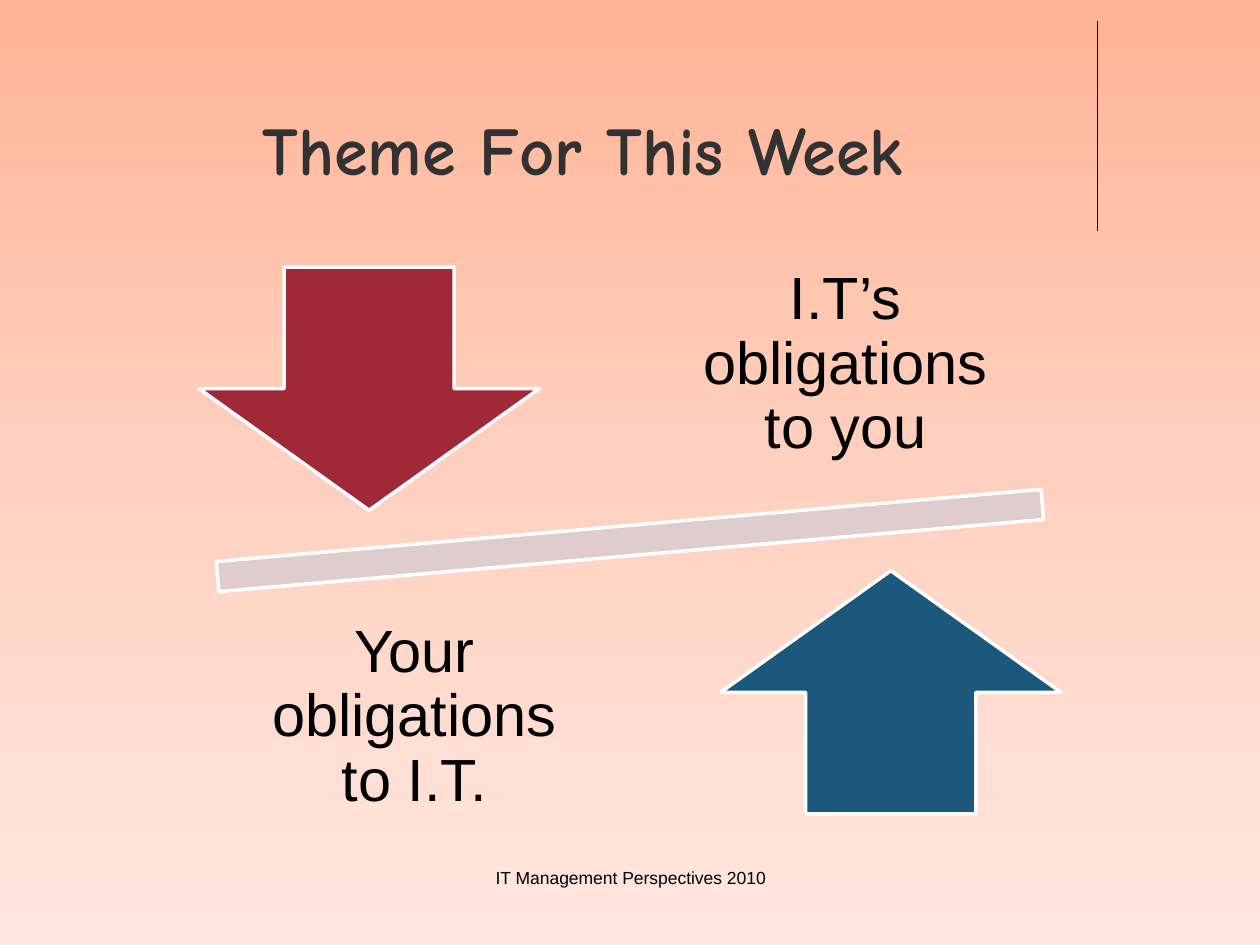
"""Builds the 'Theme For This Week' slide with two balanced arrows."""
from copy import deepcopy

from lxml import etree
from pptx import Presentation
from pptx import util as u
from pptx.dml.color import RGBColor
from pptx.enum import shapes, text
from pptx.oxml.ns import qn

COLORS = {"ink": "000000", "title": "323232", "edge": "FFFFFF", "bar": "DFCDCE",
          "down": "9F2936", "up": "1B587C"}
BACKGROUND = [(0, "FFB496"), (0.5, "FFD0BF"), (1, "FFE7E0")]

TITLE = ("Theme For This Week", (0.5, 0.13, 8.25, 1.42))
FOOTER = ("IT Management Perspectives 2010", (3.42, 6.83, 3.17, 0.5))
RULE = (8.71, 0.17, 8.71, 1.83)
FIGURES = [
    ("MATH_MINUS", "bar", (0.53, 3.78, 8.94, 1.02), 355),
    ("DOWN_ARROW", "down", (1.58, 2.12, 2.7, 1.93), 0),
    ("UP_ARROW", "up", (5.72, 4.53, 2.7, 1.93), 0),
]
OBLIGATIONS = [
    ("I.T’s obligations to you", (5.27, 1.88, 2.88, 2.03)),
    ("Your obligations to I.T.", (1.85, 4.68, 2.88, 2.03)),
]

TITLE_FONT = {"name": "Comic Neue", "size": u.Pt(39), "bold": True}
LABEL_FONT = {"name": "Arial", "size": u.Pt(34)}
FOOTER_FONT = {"name": "Arial", "size": u.Pt(10)}
INSET = u.Inches(0.26)
CENTERED = {"vertical_anchor": text.MSO_ANCHOR.MIDDLE, "margin_left": INSET,
            "margin_right": INSET, "margin_top": INSET, "margin_bottom": INSET}


def inches(values):
    return [u.Inches(value) for value in values]


def rgb(key):
    return RGBColor.from_string(COLORS[key])


def apply(target, formats):
    for name, value in formats.items():
        setattr(target, name, value)


def write(box, words, font, color, frame_formats, spacing=None):
    frame = box.text_frame
    apply(frame, {"word_wrap": True, "auto_size": text.MSO_AUTO_SIZE.NONE, **frame_formats})
    paragraph = frame.paragraphs[0]
    apply(paragraph, {"alignment": text.PP_ALIGN.CENTER, "line_spacing": spacing})
    run = paragraph.add_run()
    run.text = words
    apply(run.font, font)
    run.font.color.rgb = rgb(color)


def paint_background(slide):
    fill = slide.background.fill
    fill.gradient()
    fill.gradient_angle = 270
    stop_list = slide.element.find(".//" + qn("a:gsLst"))
    stop_list.insert(1, deepcopy(stop_list[0]))
    for stop, (position, color) in zip(fill.gradient_stops, BACKGROUND):
        stop.position = position
        stop.color.rgb = RGBColor.from_string(color)


def add_rule(slide):
    rule = slide.shapes.add_connector(shapes.MSO_CONNECTOR.STRAIGHT, *inches(RULE))
    rule.line.color.rgb = rgb("ink")
    rule.line.width = u.Pt(0.75)
    etree.SubElement(rule.element.spPr, qn("a:effectLst"))


def add_figure(slide, preset, color, place, rotation):
    figure = slide.shapes.add_shape(getattr(shapes.MSO_SHAPE, preset), *inches(place))
    figure.rotation = rotation
    figure.shadow.inherit = False
    figure.fill.solid()
    figure.fill.fore_color.rgb = rgb(color)
    figure.line.color.rgb = rgb("edge")
    figure.line.width = u.Pt(2)


def main():
    deck = Presentation()
    deck.slide_width, deck.slide_height = inches((10, 7.5))
    slide = deck.slides.add_slide(deck.slide_layouts[5])
    paint_background(slide)
    add_rule(slide)

    words, place = TITLE
    title = slide.shapes.title
    apply(title, dict(zip(("left", "top", "width", "height"), inches(place))))
    write(title, words, TITLE_FONT, "title", {"vertical_anchor": text.MSO_ANCHOR.BOTTOM})

    for figure in FIGURES:
        add_figure(slide, *figure)
    for words, place in OBLIGATIONS:
        label = slide.shapes.add_textbox(*inches(place))
        write(label, words, LABEL_FONT, "ink", CENTERED, spacing=0.9)

    words, place = FOOTER
    footer = slide.shapes.add_textbox(*inches(place))
    write(footer, words, FOOTER_FONT, "ink", {"vertical_anchor": text.MSO_ANCHOR.TOP})
    deck.save("out.pptx")


if __name__ == "__main__":
    main()
